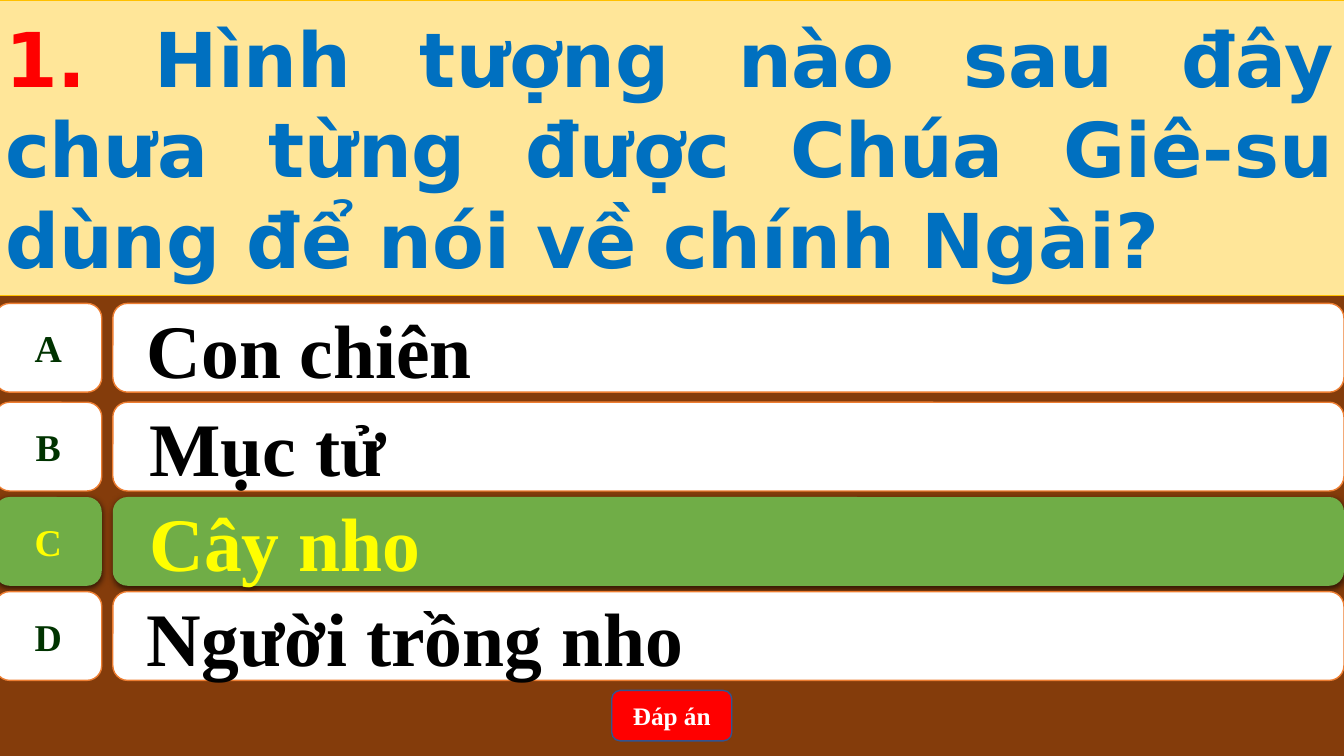
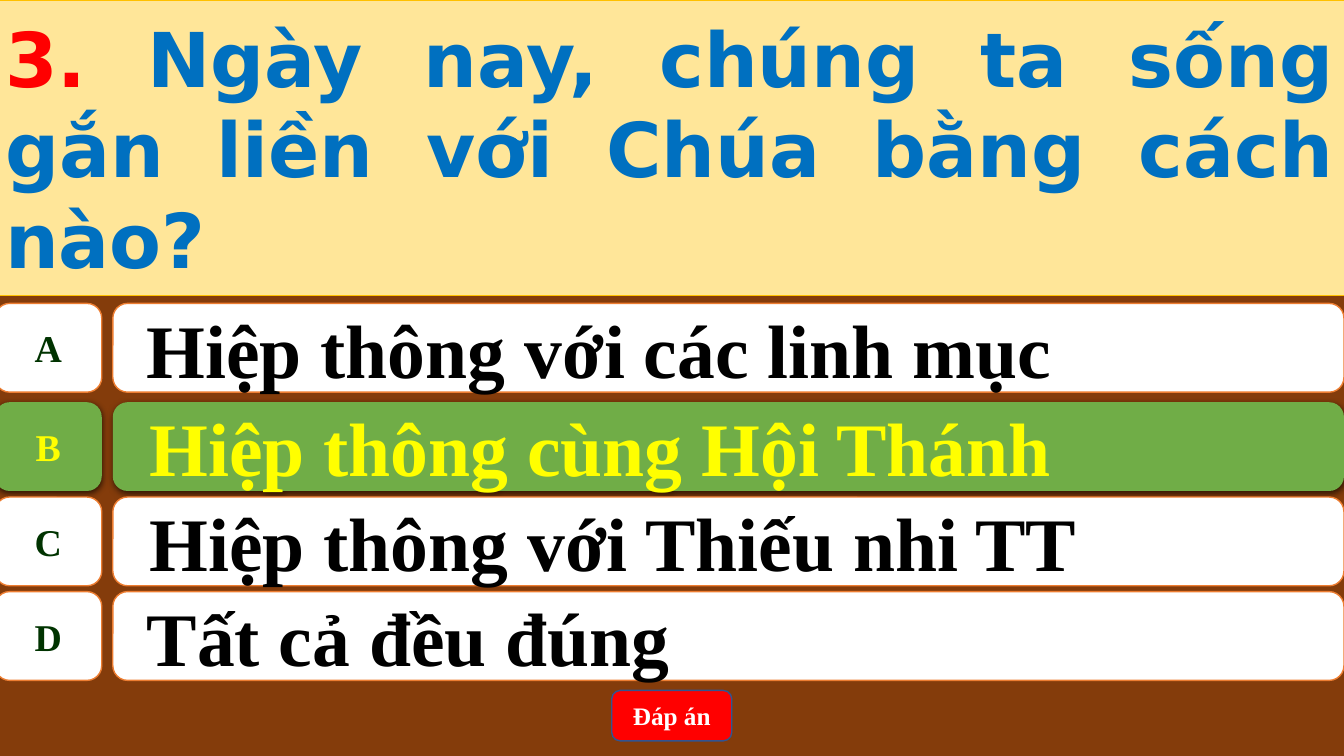
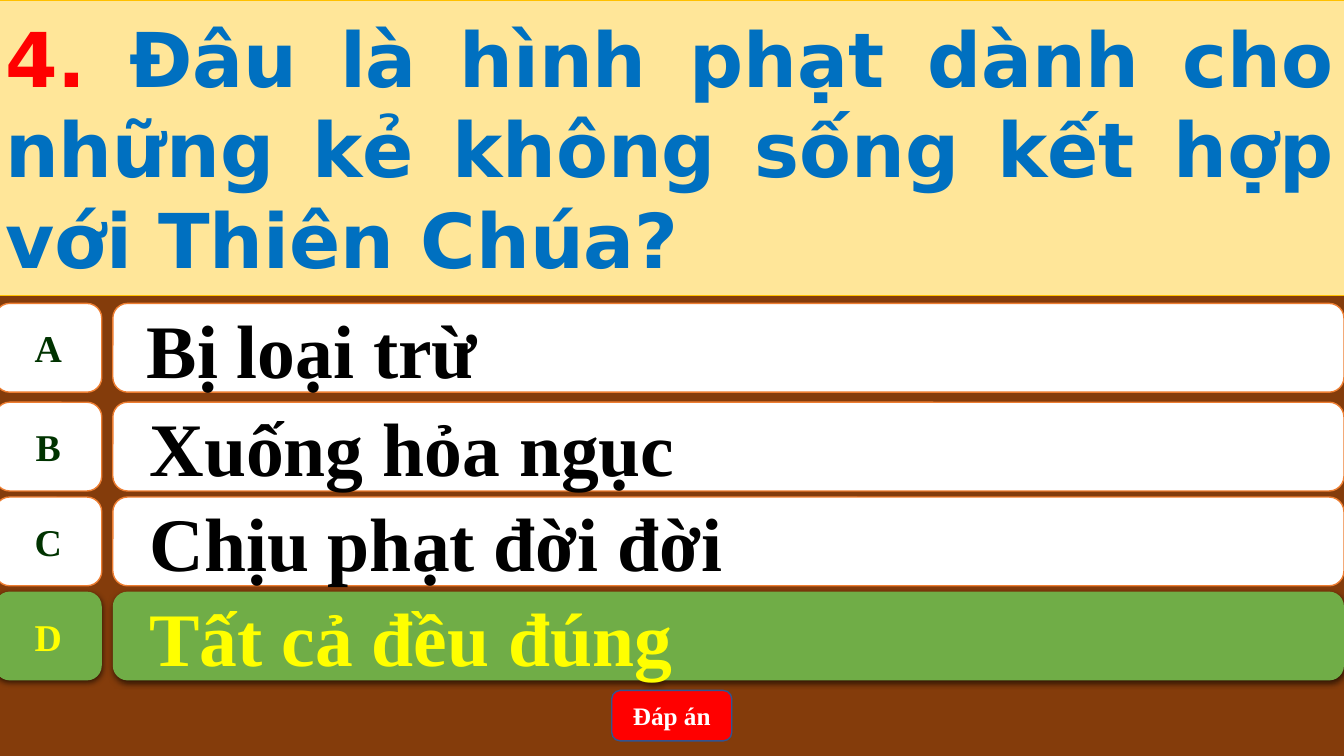
from dataclasses import dataclass

from lxml import etree
from pptx import Presentation
from pptx.dml.color import RGBColor
from pptx.enum.shapes import MSO_SHAPE
from pptx.enum.text import MSO_ANCHOR, MSO_AUTO_SIZE, PP_ALIGN
from pptx.oxml.ns import qn
from pptx.util import Pt

ROUND = MSO_SHAPE.ROUNDED_RECTANGLE
TAG = MSO_SHAPE.FLOWCHART_ALTERNATE_PROCESS
MIDDLE = MSO_ANCHOR.MIDDLE
FIXED = MSO_AUTO_SIZE.NONE
LEFT, CENTER, JUSTIFY = PP_ALIGN.LEFT, PP_ALIGN.CENTER, PP_ALIGN.JUSTIFY

QUIZ = [
    ("1.", "Hình tượng nào sau đây chưa từng được Chúa Giê-su dùng để nói về chính Ngài?",
     ["Con chiên", "Mục tử", "Cây nho", "Người trồng nho"], "C"),
    ("3.", "Ngày nay, chúng ta sống gắn liền với Chúa bằng cách nào?",
     ["Hiệp thông với các linh mục", "Hiệp thông cùng Hội Thánh",
      "Hiệp thông với Thiếu nhi TT", "Tất cả đều đúng"], "B"),
    ("4.", "Đâu là hình phạt dành cho những kẻ không sống kết hợp với Thiên Chúa?",
     ["Bị loại trừ", "Xuống hỏa ngục", "Chịu phạt đời đời", "Tất cả đều đúng"], "D"),
]
BUTTON = "Đáp án"


@dataclass(frozen=True)
class Theme:
    back: str = "843C0B"
    band: str = "FFE699"
    rim: str = "FFC000"
    number: str = "FF0000"
    ask: str = "0070C0"
    card: str = "FFFFFF"
    edge: str = "ED7D31"
    letter: str = "003300"
    answer: str = "000000"
    right: str = "70AD47"
    glow: str = "FFFF00"
    button: str = "FF0000"
    frame: str = "325491"
    label: str = "FFFFFF"
    head: str = "DejaVu Sans"
    body: str = "Times New Roman"
    big: int = 54
    mid: int = 27
    small: int = 18


T = Theme()
WIDE, HIGH = 960, 540
EDGE = -3.6
BAND = (EDGE, 0, 964, 211)
ROWS = [("A", 216.7, 14), ("B", 287.3, 16), ("C", 355, 16), ("D", 422.6, 14)]
TALL = 63.4
TAG_W = 76.3
CARD_X = 80.6
INDENT = 16
BUTTON_BOX = (437, 493.2, 85.7, 36)


def rgb(code):
    return RGBColor.from_string(code)


def paint(shape, fill, line=None, width=1):
    shape.fill.solid()
    shape.fill.fore_color.rgb = rgb(fill)
    if line:
        shape.line.color.rgb = rgb(line)
        shape.line.width = Pt(width)
    else:
        shape.line.fill.background()


def style(para, face, size, align, color=None):
    para.alignment = align
    font = para.font
    font.name, font.size, font.bold = face, Pt(size), True
    if color:
        font.color.rgb = rgb(color)


def shade(shape):
    effects = shape._element.spPr.find(qn("a:effectLst"))
    outer = etree.SubElement(effects, qn("a:outerShdw"), blurRad=str(Pt(4.5)),
                             dist=str(Pt(1.5)), dir="5400000", rotWithShape="0")
    black = etree.SubElement(outer, qn("a:srgbClr"), val="000000")
    etree.SubElement(black, qn("a:alpha"), val="63000")


def box(slide, kind, place, text, fill, line, color, size, align=CENTER, wrap=True):
    shape = slide.shapes.add_shape(kind, *map(Pt, place))
    shape.shadow.inherit = False
    paint(shape, fill, line)
    frame = shape.text_frame
    frame.word_wrap = wrap
    frame.vertical_anchor = MIDDLE
    frame.text = text
    style(frame.paragraphs[0], T.body, size, align, color)
    return shape


def ask(slide, number, text):
    title = slide.shapes.title
    title.left, title.top, title.width, title.height = map(Pt, BAND)
    paint(title, T.band, T.rim, 0.5)
    frame = title.text_frame
    frame.auto_size = FIXED
    frame.vertical_anchor = MIDDLE
    para = frame.paragraphs[0]
    style(para, T.head, T.big, JUSTIFY)
    for part, color in ((number + " ", T.number), (text, T.ask)):
        run = para.add_run()
        run.text = part
        run.font.color.rgb = rgb(color)


def choice(slide, row, text, right):
    letter, top, indent = row
    fill, line = (T.right, None) if right else (T.card, T.edge)
    ink, dark = (T.glow, T.glow) if right else (T.letter, T.answer)
    card = box(slide, ROUND, (CARD_X, top, WIDE - CARD_X, TALL), text,
               fill, line, dark, T.big, LEFT)
    props = card.text_frame.paragraphs[0]._p.get_or_add_pPr()
    props.set("marL", str(Pt(INDENT if right else indent)))
    tag = box(slide, TAG, (EDGE, top, TAG_W, TALL), letter,
              fill, line, ink, T.mid, wrap=False)
    if right:
        shade(card)
        shade(tag)


def main():
    deck = Presentation()
    deck.slide_width, deck.slide_height = Pt(WIDE), Pt(HIGH)
    back = deck.slide_master.background.fill
    back.solid()
    back.fore_color.rgb = rgb(T.back)
    for number, text, answers, key in QUIZ:
        slide = deck.slides.add_slide(deck.slide_layouts[5])
        ask(slide, number, text)
        for row, answer in zip(ROWS, answers):
            choice(slide, row, answer, row[0] == key)
        box(slide, ROUND, BUTTON_BOX, BUTTON, T.button, T.frame, T.label, T.small)
    deck.save("out.pptx")


if __name__ == "__main__":
    main()
